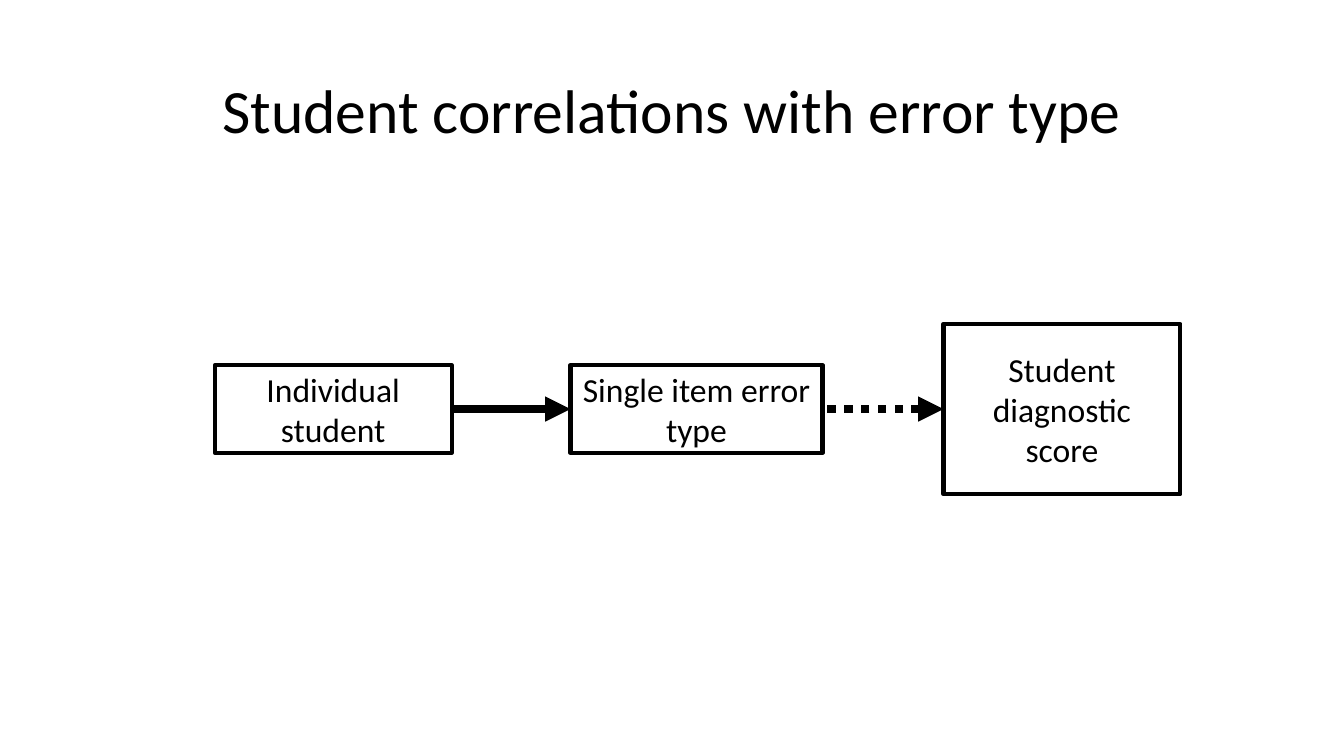
from lxml.etree import SubElement
from pptx import Presentation
from pptx.dml.color import RGBColor
from pptx.enum.dml import MSO_LINE_DASH_STYLE as Dash
from pptx.enum.shapes import MSO_CONNECTOR as Connector, MSO_SHAPE as Shape
from pptx.enum.text import MSO_ANCHOR as Anchor, PP_ALIGN as Align
from pptx.oxml.ns import qn
from pptx.util import Pt

BLACK = "000000"
FONT = "Calibri"
MIDDLE = 292.2
STEPS = [
    ("Individual student", 153.4, 169.2, 62.6),
    ("Single item error type", 407.5, 180, 62.6),
    ("Student diagnostic score", 673.9, 169.2, 121.7),
]
ARROW_DASHES = [None, Dash.ROUND_DOT]


def colour(value):
    return RGBColor.from_string(value)


def write(shape, text, size):
    frame = shape.text_frame
    frame.text = text
    frame.word_wrap = True
    frame.vertical_anchor = Anchor.MIDDLE
    para = frame.paragraphs[0]
    para.alignment = Align.CENTER
    for span in para.runs:
        span.font.name = FONT
        span.font.size = Pt(size)
        span.font.color.rgb = colour(BLACK)


def add_title(page, text):
    box = page.shapes.add_textbox(Pt(66), Pt(28.8), Pt(828), Pt(104.4))
    write(box, text, 44)
    box.text_frame.paragraphs[0].line_spacing = 0.9


def add_step(page, text, left, width, height):
    box = page.shapes.add_shape(
        Shape.RECTANGLE, Pt(left), Pt(MIDDLE - height / 2), Pt(width), Pt(height)
    )
    box.shadow.inherit = False
    box.fill.background()
    box.line.color.rgb = colour(BLACK)
    box.line.width = Pt(3)
    write(box, text, 24)


def add_arrow(page, tip, start, dash):
    arrow = page.shapes.add_connector(
        Connector.STRAIGHT, Pt(tip), Pt(MIDDLE), Pt(start), Pt(MIDDLE)
    )
    arrow.line.color.rgb = colour(BLACK)
    arrow.line.width = Pt(6)
    if dash:
        arrow.line.dash_style = dash
    properties = arrow._element.spPr
    SubElement(properties.find(qn("a:ln")), qn("a:headEnd"), type="triangle")
    SubElement(properties, qn("a:effectLst"))


def main():
    deck = Presentation()
    deck.slide_width = Pt(960)
    deck.slide_height = Pt(540)
    page = deck.slides.add_slide(deck.slide_layouts[6])
    add_title(page, "Student correlations with error type")
    for step in STEPS:
        add_step(page, *step)
    for before, after, dash in zip(STEPS, STEPS[1:], ARROW_DASHES):
        _, left, width, _ = before
        add_arrow(page, after[1], left + width, dash)
    deck.save("out.pptx")


if __name__ == "__main__":
    main()
